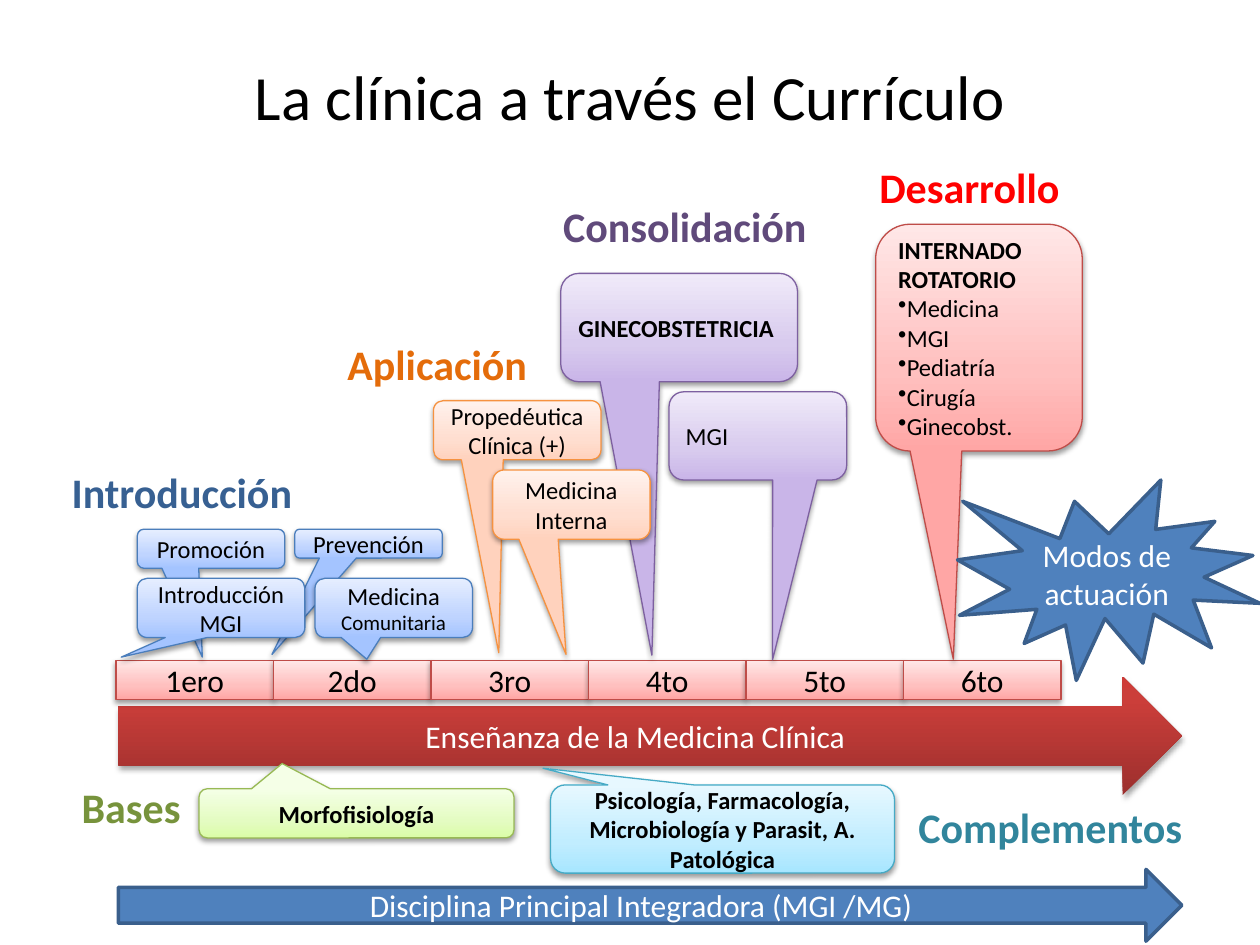
import lxml.etree
import pptx
import pptx.dml.color
import pptx.enum.shapes
import pptx.enum.text
import pptx.oxml.ns
import pptx.util

Inches = pptx.util.Inches
Pt = pptx.util.Pt
qn = pptx.oxml.ns.qn
SHAPE = pptx.enum.shapes.MSO_SHAPE
ALIGN = pptx.enum.text.PP_ALIGN
ANCHOR = pptx.enum.text.MSO_ANCHOR

COLORS = {
    "black": "000000", "white": "FFFFFF", "blue": "4F81BD", "navy": "3A5F8C",
    "introduction": "376092", "application": "E46C0A",
    "consolidation": "604A7B", "development": "FF0000",
    "bases": "77933C", "complements": "31859C",
    "blue edge": "4B7EBC", "orange edge": "F69240", "purple edge": "7D60A0",
    "red edge": "BF4C48", "green edge": "98B955", "aqua edge": "46AAC5",
}
GRADIENTS = {
    "blue": {0: "A4C4FF", 35: "BFD4FF", 100: "E6EEFF"},
    "orange": {0: "FFD2BD", 35: "FFDED0", 100: "FFF2ED"},
    "purple": {0: "C9B5E8", 35: "D8CBEE", 100: "F0EAF9"},
    "red": {0: "FFA6A5", 35: "FFC0BF", 100: "FFE7E7"},
    "green": {0: "DAFDA7", 35: "E4FCC2", 100: "F5FFE7"},
    "aqua": {0: "A7E6FF", 35: "C1EDFF", 100: "E7F8FF"},
    "dark red": {0: "9C2F2D", 80: "CB3E3A", 100: "CE3B37"},
}


def rgb(name):
    return pptx.dml.color.RGBColor.from_string(COLORS[name])


def write_text(box, paragraphs, color="black", align=ALIGN.CENTER, anchor=ANCHOR.MIDDLE, **style):
    frame = box.text_frame
    frame.word_wrap = True
    frame.vertical_anchor = anchor
    for index, spans in enumerate(paragraphs):
        para = frame.paragraphs[0] if index == 0 else frame.add_paragraph()
        para.alignment = align
        for text, changes in spans:
            if text.startswith("•"):
                bullet = lxml.etree.SubElement(para._p.get_or_add_pPr(), qn("a:buChar"))
                bullet.set("char", "•")
                text = text[1:]
            span = para.add_run()
            span.text = text
            values = {"name": "Calibri", "size": Pt(14), "bold": False, **style, **changes}
            for key, value in values.items():
                setattr(span.font, key, value)
            span.font.color.rgb = rgb(color)


def add_label(page, box, text, color, align, anchor, size, bold):
    label = page.shapes.add_textbox(*map(Inches, box))
    write_text(label, [[(text, {})]], color, align, anchor, size=Pt(size), bold=bold)


def add_heading(page, box, text, color):
    add_label(page, box, text, color, ALIGN.LEFT, ANCHOR.TOP, 24, True)


def fill_gradient(shape, stops):
    shape.fill.gradient()
    shape.fill.gradient_angle = 90
    stop_list = shape._element.spPr.find(qn("a:gradFill")).find(qn("a:gsLst"))
    stop_list.clear()
    for position, color in stops.items():
        stop = lxml.etree.SubElement(stop_list, qn("a:gs"), pos=str(position * 1000))
        lxml.etree.SubElement(stop, qn("a:srgbClr"), val=color)


def cast_shadow(shape, opacity):
    effects = shape._element.spPr.find(qn("a:effectLst"))
    shadow = lxml.etree.SubElement(
        effects, qn("a:outerShdw"), blurRad=str(Pt(3.1)), dist=str(Pt(1.7)),
        dir="5400000", rotWithShape="0")
    shade = lxml.etree.SubElement(shadow, qn("a:srgbClr"), val=COLORS["black"])
    lxml.etree.SubElement(shade, qn("a:alpha"), val=str(opacity * 1000))


def add_figure(shapes, kind, box, gradient=None, edge=None, width=0.75, opacity=38):
    shape = shapes.add_shape(kind, *map(Inches, box))
    shape.shadow.inherit = False
    if gradient:
        fill_gradient(shape, GRADIENTS[gradient])
        cast_shadow(shape, opacity)
    else:
        shape.fill.solid()
        shape.fill.fore_color.rgb = rgb("blue")
    if edge:
        shape.line.color.rgb = rgb(edge)
        shape.line.width = Pt(width)
    else:
        shape.line.fill.background()
    return shape


def add_stage(page, box, heading, color, tint, callouts, align=ALIGN.CENTER, bold=False):
    left, top, width, height = box
    for (x, y, w, h), tail, paragraphs in callouts:
        callout = add_figure(page.shapes, SHAPE.ROUNDED_RECTANGULAR_CALLOUT,
                             (left + x, top + y, w, h), tint, tint + " edge")
        for index, value in enumerate(tail):
            callout.adjustments[index] = value
        write_text(callout, paragraphs, align=align, bold=bold)
    add_heading(page, box, heading, color)


def add_timeline(page, box, years):
    left, top, width, height = box
    group = page.shapes.add_group_shape()
    step = width / len(years)
    for index, year in enumerate(years):
        cell = add_figure(group.shapes, SHAPE.RECTANGLE,
                          (left + index * step, top, step, height), "red", "red edge")
        write_text(cell, [[(year, {})]], size=Pt(18))


def add_banner(page, box, kind, text, **look):
    banner = add_figure(page.shapes, kind, box, **look)
    write_text(banner, [[(text, {})]], "white", size=Pt(18))


def main():
    deck = pptx.Presentation()
    deck.slide_width, deck.slide_height = Inches(10), Inches(7.5)
    page = deck.slides.add_slide(deck.slide_layouts[6])
    strong = {"bold": True}
    outline = {"edge": "navy", "width": 2}

    add_label(page, (0.5, 0.13, 9, 1.25), "La clínica a través el Currículo", "black",
              ALIGN.CENTER, ANCHOR.MIDDLE, 36, False)
    add_banner(page, (0.94, 5.37, 8.44, 0.94), SHAPE.RIGHT_ARROW,
               "Enseñanza de la Medicina Clínica", gradient="dark red", opacity=35)
    add_timeline(page, (0.92, 5.24, 7.5, 0.31), ["1ero", "2do", "3ro", "4to", "5to", "6to"])

    add_stage(page, (4.37, 1.54, 2.19, 0.5), "Consolidación", "consolidation", "purple", [
        ((0.08, 0.63, 1.88, 0.86), (-0.115, 3.024), [[("GINECOBSTETRICIA", strong)]]),
        ((0.94, 1.57, 1.41, 0.7), (0.083, 2.539), [[("MGI", {})]]),
    ], align=ALIGN.LEFT)
    add_stage(page, (0.47, 3.65, 2.27, 0.5), "Introducción", "introduction", "blue", [
        ((1.87, 0.55, 1.17, 0.23), (-0.655, 3.825), [[("Prevención", {})]]),
        ((0.62, 0.55, 1.17, 0.31), (-0.059, 2.776), [[("Promoción", {})]]),
        ((0.62, 0.94, 1.33, 0.47), (-0.596, 0.831), [[("Introducción MGI", {})]]),
        ((2.03, 0.94, 1.25, 0.47), (-0.171, 0.866),
         [[("Medicina ", {}), ("Comunitaria", {"size": Pt(12)})]]),
    ])
    add_stage(page, (2.66, 2.64, 1.87, 0.5), "Aplicación", "application", "orange", [
        ((0.78, 0.54, 1.33, 0.47), (-0.11, 3.756), [[("Propedéutica Clínica (+)", {})]]),
        ((1.25, 1.09, 1.25, 0.55), (-0.034, 2.161), [[("Medicina Interna", {})]]),
    ])
    rotations = ["•Medicina", "•MGI", "•Pediatría", "•Cirugía", "•Ginecobst."]
    add_stage(page, (6.88, 1.23, 2.11, 0.5), "Desarrollo", "development", "red", [
        ((0.07, 0.55, 1.64, 1.8), (-0.124, 1.418),
         [[("INTERNADO", strong)], [("ROTATORIO", strong)]]
         + [[(rotation, {})] for rotation in rotations]),
    ], align=ALIGN.LEFT)
    add_stage(page, (0.55, 6.15, 2.5, 0.5), "Bases", "bases", "green", [
        ((1.03, 0.11, 2.5, 0.39), (-0.236, -1.013), [[("Morfofisiología", {})]]),
    ], bold=True)
    add_stage(page, (7.19, 6.31, 2.5, 0.5), "Complementos", "complements", "aqua", [
        ((-2.82, -0.08, 2.73, 0.7), (-0.522, -0.689),
         [[("Psicología, Farmacología, Microbiología y Parasit, A. Patológica", {})]]),
    ], bold=True)

    add_banner(page, (7.6, 3.81, 2.4, 1.59), SHAPE.EXPLOSION1, "Modos de actuación", **outline)
    add_banner(page, (0.94, 6.9, 8.44, 0.57), SHAPE.RIGHT_ARROW,
               "Disciplina Principal Integradora (MGI /MG)", **outline)
    deck.save("out.pptx")


if __name__ == "__main__":
    main()
